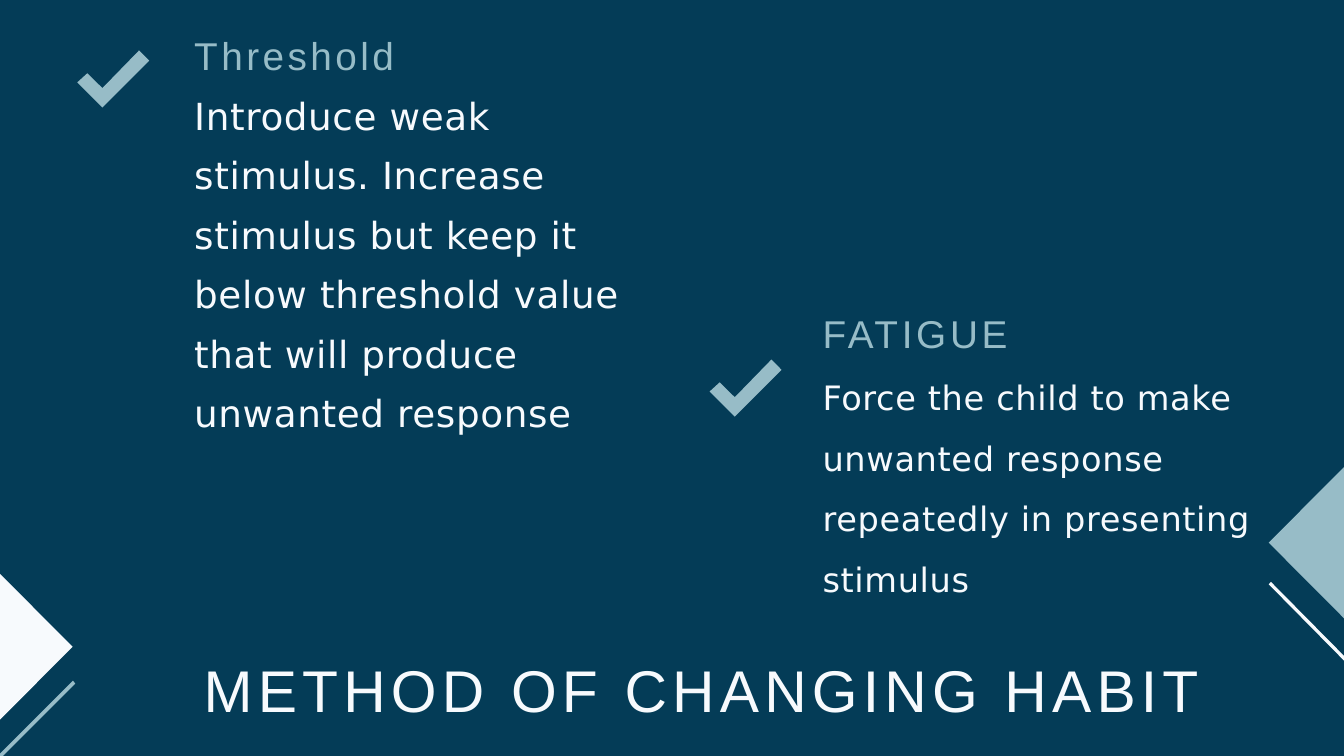
from pptx import Presentation
from pptx.dml.color import RGBColor as RGB
from pptx.enum.text import MSO_AUTO_SIZE as FIT
from pptx.util import Inches, Pt

NAVY = RGB(0x04, 0x3C, 0x57)
SKY = RGB(0x97, 0xBC, 0xC7)
WHITE = RGB(0xF7, 0xFA, 0xFD)
HEAD, BODY = "Arial", "DejaVu Sans"

# The slide is a grid of 100 columns by 100 rows
WIDTH, HEIGHT = Inches(20), Inches(11.25)
COL, ROW = WIDTH / 100, HEIGHT / 100

# Outlines as shares of their box
TICK = [(0.35, 0.66), (0.86, 0), (1, 0.18), (0.35, 1), (0, 0.56), (0.14, 0.4)]
RIGHT = [(0, 0), (1, 0.5), (0, 1)]
LEFT = [(1, 0), (0, 0.5), (1, 1)]
RISE = [(1, 0.04), (0.04, 1), (0, 1), (0, 0.97), (0.97, 0)]
FALL = [(1, 1), (0, 0.03), (0.03, 0), (1, 0.94)]


def scale(box):
    x, y, w, h = box
    return [round(n) for n in (x * COL, y * ROW, w * COL, h * ROW)]


def add_form(slide, box, points, color):
    x, y, w, h = scale(box)
    dots = [(round(x + w * a), round(y + h * b)) for a, b in points]
    pen = slide.shapes.build_freeform(*dots[0], scale=1.0)
    pen.add_line_segments(dots[1:], close=True)
    form = pen.convert_to_shape()
    form.shadow.inherit = False
    form.fill.solid()
    form.fill.fore_color.rgb = color
    form.line.fill.background()


def add_text(slide, box, inset, lines):
    """Each line is (text, font values, letter gap, paragraph values)."""
    frame = slide.shapes.add_textbox(*scale(box)).text_frame
    values = {"word_wrap": True, "auto_size": FIT.SHAPE_TO_FIT_TEXT,
              "margin_left": 0, "margin_right": 0, "margin_bottom": 0,
              "margin_top": round(inset * ROW)}
    for name, value in values.items():
        setattr(frame, name, value)
    for i, (text, font, gap, space) in enumerate(lines):
        para = frame.add_paragraph() if i else frame.paragraphs[0]
        for name, value in space.items():
            setattr(para, name, value)
        run = para.add_run()
        run.text = text
        face, size, color = font
        run.font.name, run.font.size = face, Pt(size)
        run.font.color.rgb = color
        run.font._element.set("spc", str(round(gap * 100)))


def add_point(slide, tick, box, inset, head, body):
    """A tick beside a heading and its text."""
    add_form(slide, (*tick, 5.35, 7.56), TICK, SKY)
    add_text(slide, box, inset, [head, body])


def add_sides(slide):
    """Triangles and slanted bars at both edges."""
    add_form(slide, (0, 75.91, 5.4, 19.29), RIGHT, WHITE)
    add_form(slide, (94.4, 61.78, 5.6, 20), LEFT, SKY)
    add_form(slide, (0, 90.04, 5.6, 9.96), RISE, SKY)
    add_form(slide, (94.4, 76.98, 5.6, 10.4), FALL, WHITE)


def main():
    deck = Presentation()
    deck.slide_width, deck.slide_height = WIDTH, HEIGHT
    slide = deck.slides.add_slide(deck.slide_layouts[6])
    slide.background.fill.solid()
    slide.background.fill.fore_color.rgb = NAVY

    # Title
    add_text(slide, (15.15, 86.31, 75.25, 9.6), 0.18, [
        ("METHOD OF CHANGING HABIT", (HEAD, 63, WHITE), 5.6,
         {"space_before": Pt(1.1)})])

    # The two methods
    add_point(
        slide, (5.75, 6.67), (14.45, 2.04, 32.9, 56.09), 2.13,
        ("Threshold", (HEAD, 41.5, SKY), 3.7, {"space_before": Pt(17.1)}),
        ("Introduce weak stimulus. Increase stimulus but keep it below "
         "threshold value that will produce unwanted response",
         (BODY, 40, WHITE), 0.7,
         {"line_spacing": 1.33, "space_before": Pt(0.1)}))
    add_point(
        slide, (52.8, 47.56), (61.2, 40.62, 32.9, 39.02), 0.36,
        ("FATIGUE", (HEAD, 41.5, SKY), 4,
         {"line_spacing": Pt(49.6), "space_before": Pt(2.8)}),
        ("Force the child to make unwanted response repeatedly in "
         "presenting stimulus", (BODY, 36, WHITE), 0.7,
         {"line_spacing": 1.5, "space_before": Pt(1.1)}))

    add_sides(slide)
    deck.save("out.pptx")


if __name__ == "__main__":
    main()
